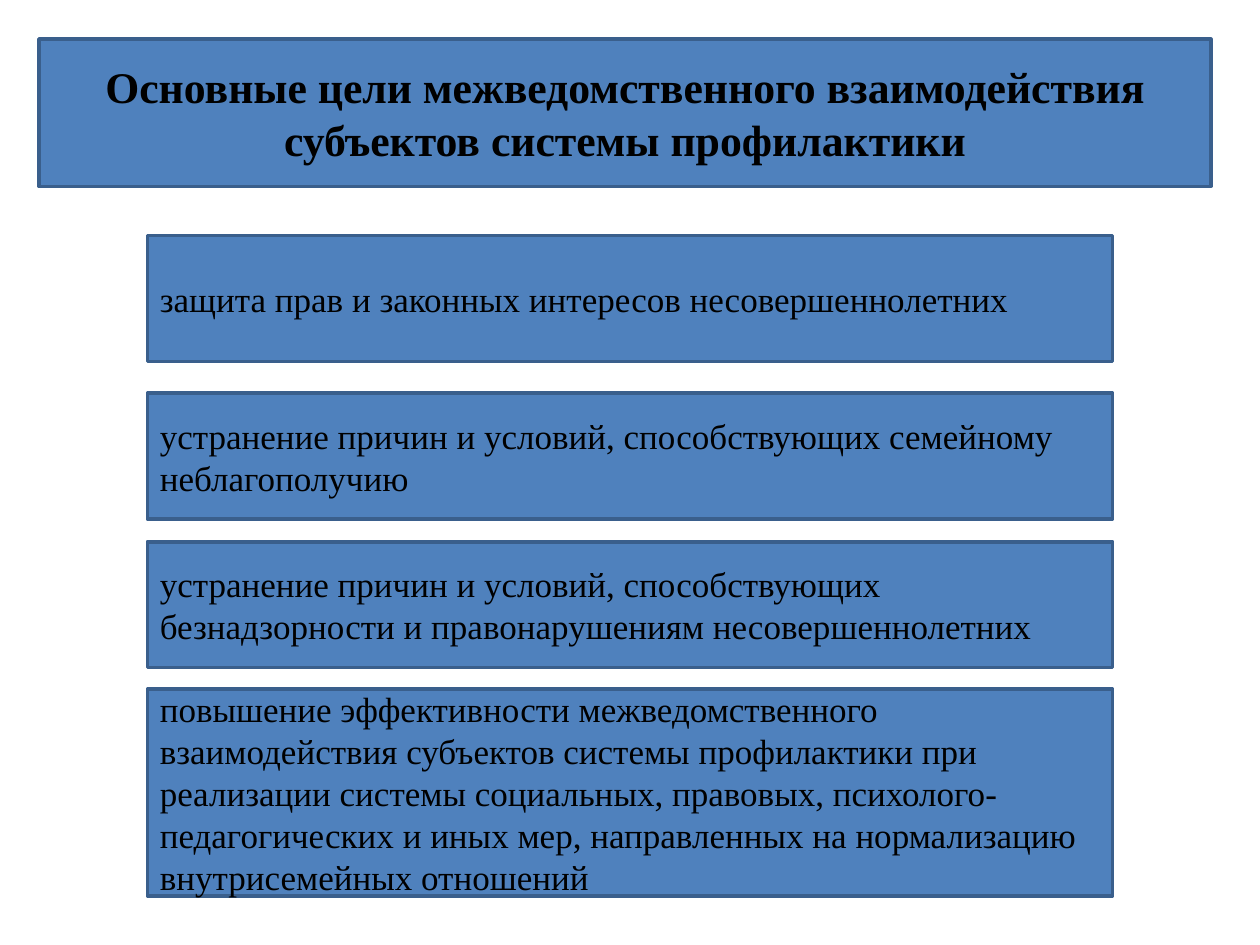
from pptx import Presentation
from pptx.dml.color import RGBColor
from pptx.enum.shapes import MSO_SHAPE
from pptx.enum.text import MSO_ANCHOR, PP_ALIGN
from pptx.util import Inches, Pt

RECTANGLE = MSO_SHAPE.RECTANGLE
MIDDLE = MSO_ANCHOR.MIDDLE
LEFT, CENTER = PP_ALIGN.LEFT, PP_ALIGN.CENTER

BLUE = RGBColor(0x4F, 0x81, 0xBD)
DARK_BLUE = RGBColor(0x3A, 0x5F, 0x8C)
BLACK = RGBColor(0, 0, 0)
FONT = "Times New Roman"

TITLE = "Основные цели межведомственного взаимодействия субъектов системы профилактики"
GOALS = [
    (1.87, 1, "защита прав и законных интересов несовершеннолетних"),
    (3.12, 1, "устранение причин и условий, способствующих семейному неблагополучию"),
    (4.3, 1, "устранение причин и условий, способствующих безнадзорности "
             "и правонарушениям несовершеннолетних"),
    (5.47, 1.64, "повышение эффективности межведомственного взаимодействия субъектов "
                 "системы профилактики при реализации системы социальных, правовых, "
                 "психолого-педагогических и иных мер, направленных на нормализацию "
                 "внутрисемейных отношений"),
]


def add_panel(s, left, top, width, height, text, size, align=LEFT, bold=False):
    sp = s.shapes.add_shape(RECTANGLE, left, top, width, height)
    sp.shadow.inherit = False
    sp.fill.solid()
    sp.fill.fore_color.rgb = BLUE
    sp.line.color.rgb = DARK_BLUE
    sp.line.width = Pt(2)
    tf = sp.text_frame
    tf.word_wrap = True
    tf.vertical_anchor = MIDDLE
    p = tf.paragraphs[0]
    p.text = text
    p.alignment = align
    font = p.runs[0].font
    font.name = FONT
    font.size = Pt(size)
    font.bold = bold
    font.color.rgb = BLACK


def add_goals(s, left, width):
    for top, height, text in GOALS:
        add_panel(s, left, Inches(top), width, Inches(height), text, 20)


def main():
    prs = Presentation()
    prs.slide_width, prs.slide_height = Inches(10), Inches(7.5)
    s = prs.slides.add_slide(prs.slide_layouts[6])
    add_panel(s, Inches(0.31), Inches(0.31), Inches(9.3), Inches(1.17),
              TITLE, 25, CENTER, True)
    add_goals(s, Inches(1.17), Inches(7.66))
    prs.save("out.pptx")


if __name__ == "__main__":
    main()
